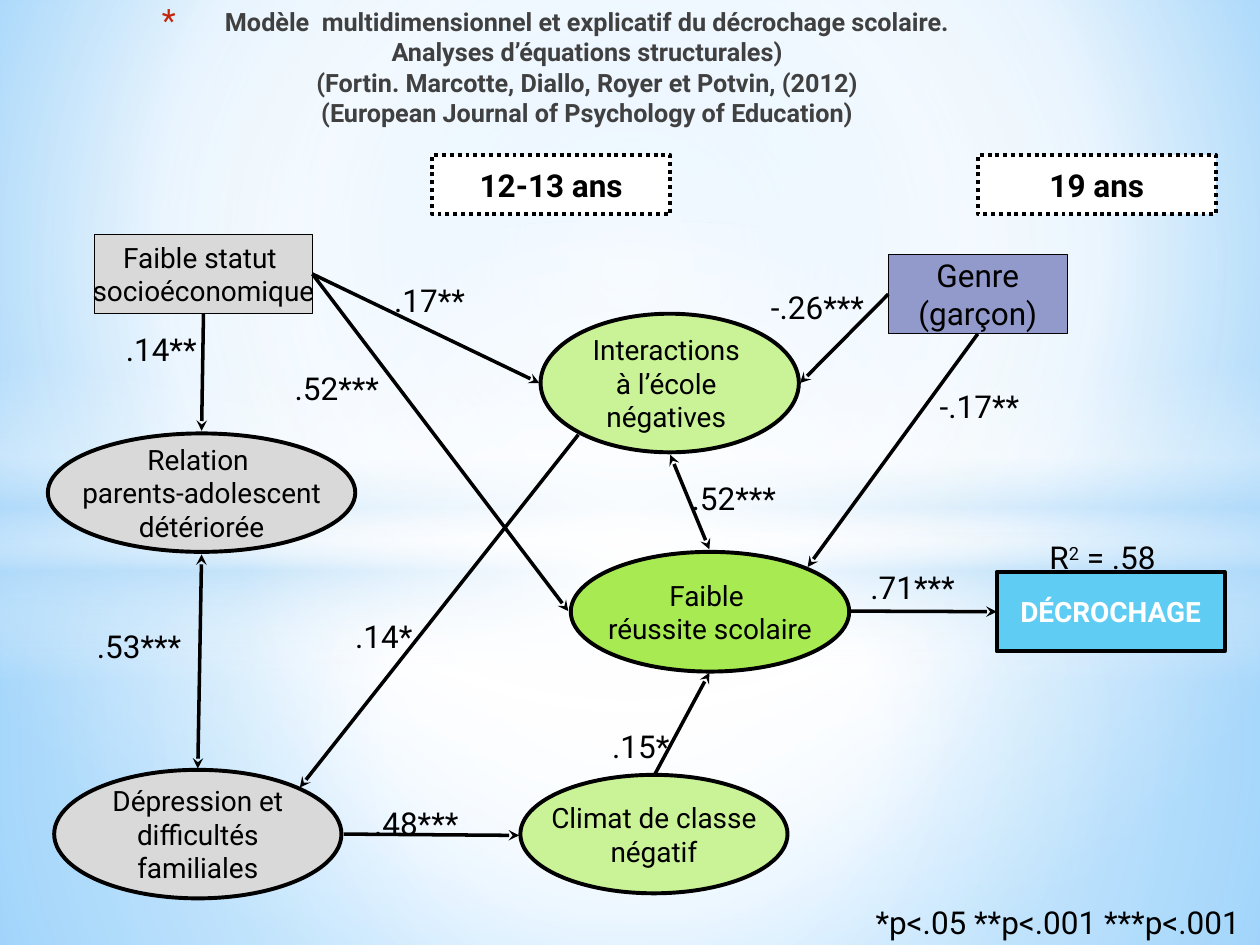
from lxml import etree
from pptx import Presentation
from pptx.dml.color import RGBColor
from pptx.enum.dml import MSO_LINE
from pptx.enum.shapes import MSO_CONNECTOR, MSO_SHAPE
from pptx.enum.text import MSO_ANCHOR, MSO_AUTO_SIZE, PP_ALIGN
from pptx.oxml.ns import qn
from pptx.util import Inches, Pt

RECTANGLE, OVAL = MSO_SHAPE.RECTANGLE, MSO_SHAPE.OVAL
STRAIGHT = MSO_CONNECTOR.STRAIGHT
DOTTED = MSO_LINE.ROUND_DOT
TOP, MIDDLE = MSO_ANCHOR.TOP, MSO_ANCHOR.MIDDLE
CENTER, LEFT = PP_ALIGN.CENTER, PP_ALIGN.LEFT
NO_AUTOFIT = MSO_AUTO_SIZE.NONE

FONT = "Roboto"
BLACK = RGBColor(0x00, 0x00, 0x00)
WHITE = RGBColor(0xFF, 0xFF, 0xFF)
CHARCOAL = RGBColor(0x40, 0x40, 0x40)
RED = RGBColor(0xC3, 0x26, 0x0C)
GRAY = RGBColor(0xD9, 0xD9, 0xD9)
LAVENDER = RGBColor(0x91, 0x9A, 0xCA)
CYAN = RGBColor(0x5E, 0xCC, 0xF3)
PALE_GREEN = RGBColor(0xCA, 0xF2, 0x97)
GREEN = RGBColor(0xA7, 0xEA, 0x52)
SKY = RGBColor(0x9E, 0xD5, 0xFF)
DEEP_SKY = RGBColor(0x5B, 0xB9, 0xFF)
MIST = RGBColor(0xB4, 0xDC, 0xFA)

TITLE = """Modèle  multidimensionnel et explicatif du décrochage scolaire.
Analyses d’équations structurales)
(Fortin. Marcotte, Diallo, Royer et Potvin, (2012)
(European Journal of Psychology of Education)"""

CENTERED = (50, 50, 50, 50)
BACKDROP = [
    (RECTANGLE, (0, 4.23, 10, 3.27), [(0, WHITE, 91), (37, WHITE, 76), (100, MIST, 79)], CENTERED),
    (RECTANGLE, (0, 0, 10, 4.23), [(0, WHITE, 89), (48, WHITE, 62), (100, MIST, 79)], CENTERED),
    (RECTANGLE, (0, 2.9, 10, 2.5),
     [(0, WHITE, 0), (29, WHITE, 30), (45, MIST, 40), (55, WHITE, 26), (65, MIST, 60), (100, WHITE, 0)], None),
    (OVAL, (0, 1.75, 10, 5.58), [(0, WHITE, 100), (54, WHITE, 0)], CENTERED),
]

FACTORS = [
    ("Relation \nparents-adolescent\ndétériorée", (0.38, 3.44, 2.44, 0.94), GRAY),
    ("Dépression et\ndifficultés\nfamiliales", (0.43, 6.11, 2.28, 1.02), GRAY),
    ("Climat de classe\nnégatif", (4.13, 6.15, 2.12, 0.94), PALE_GREEN),
    ("Faible \nréussite scolaire", (4.53, 4.38, 2.21, 0.95), GREEN),
    ("Interactions \nà l’école \nnégatives ", (4.29, 2.49, 2.05, 1.1), PALE_GREEN),
]

COEFFICIENTS = [
    (".14**", 0.9, 2.57, 0.79),
    (".53***", 0.67, 4.93, 0.95),
    (".48***", 2.87, 6.33, 0.95),
    (".17**", 3.03, 2.18, 0.95),
    (".52***", 2.24, 2.88, 0.95),
    (".14*", 2.72, 4.85, 0.95),
    (".15*", 4.76, 5.72, 0.95),
    ("-.26***", 6.02, 2.24, 1.02),
    ("-.17**", 7.36, 3.02, 0.95),
    (".52***", 5.39, 3.75, 0.95),
    (".71***", 6.81, 4.46, 0.95),
]


def apply_gradient(fill, properties, stops, focus):
    fill.solid()
    gradient = etree.Element(qn("a:gradFill"), rotWithShape="1")
    stop_list = etree.SubElement(gradient, qn("a:gsLst"))
    for position, color, opacity in stops:
        stop = etree.SubElement(stop_list, qn("a:gs"), pos=str(position * 1000))
        color_element = etree.SubElement(stop, qn("a:srgbClr"), val=str(color))
        etree.SubElement(color_element, qn("a:alpha"), val=str(opacity * 1000))
    if focus:
        shade = etree.SubElement(gradient, qn("a:path"), {"path": "circle"})
        edges = {side: str(value * 1000) for side, value in zip("ltrb", focus)}
        etree.SubElement(shade, qn("a:fillToRect"), edges)
    else:
        etree.SubElement(gradient, qn("a:lin"), ang="5400000", scaled="0")
    properties.replace(properties.find(qn("a:solidFill")), gradient)


def format_text(text_frame, size, color=BLACK, bold=False, align=CENTER):
    for paragraph in text_frame.paragraphs:
        paragraph.alignment = align
        for run in paragraph.runs:
            run.font.name = FONT
            run.font.size = Pt(size)
            run.font.bold = bold
            run.font.color.rgb = color


def add_backdrop(slide):
    background = slide.background
    fill = background.fill
    fill.solid()
    properties = background._cSld.find(qn("p:bg")).find(qn("p:bgPr"))
    apply_gradient(fill, properties, [(0, SKY, 100), (60, WHITE, 100), (100, DEEP_SKY, 100)], (20, 10, 20, 60))
    for kind, box, stops, focus in BACKDROP:
        shape = slide.shapes.add_shape(kind, *map(Inches, box))
        shape.shadow.inherit = False
        shape.line.fill.background()
        apply_gradient(shape.fill, shape._element.spPr, stops, focus)


def add_title(slide):
    title = slide.shapes.title
    title._element.getparent().append(title._element)
    title.left, title.top, title.width, title.height = map(Inches, (0, 0, 8.62, 1.15))
    text_frame = title.text_frame
    text_frame.auto_size = NO_AUTOFIT
    text_frame.vertical_anchor = TOP
    paragraph = text_frame.paragraphs[0]
    paragraph.text = "\v".join(TITLE.splitlines())
    format_text(text_frame, 14.4, CHARCOAL, True)
    paragraph.line_spacing = 1.0
    paragraph.space_before = Pt(0)
    properties = paragraph._p.get_or_add_pPr()
    properties.set("marL", str(Inches(0.7)))
    properties.set("indent", str(Inches(-0.5)))
    bullet_color = etree.SubElement(properties, qn("a:buClr"))
    etree.SubElement(bullet_color, qn("a:srgbClr"), val=str(RED))
    etree.SubElement(properties, qn("a:buSzPct"), val="128000")
    etree.SubElement(properties, qn("a:buFont"), typeface=FONT)
    etree.SubElement(properties, qn("a:buChar"), char="*")


def add_node(slide, kind, text, box, color, size=16, line_width=2.25, font_color=BLACK, bold=False):
    shape = slide.shapes.add_shape(kind, *map(Inches, box))
    shape.shadow.inherit = False
    shape.fill.solid()
    shape.fill.fore_color.rgb = color
    shape.line.color.rgb = BLACK
    shape.line.width = Pt(line_width)
    text_frame = shape.text_frame
    text_frame.text = text
    text_frame.word_wrap = False
    text_frame.vertical_anchor = MIDDLE
    format_text(text_frame, size, font_color, bold)
    return shape


def add_arrow(slide, start, end, both_ends=False):
    connector = slide.shapes.add_connector(STRAIGHT, *map(Inches, start + end))
    connector.line.color.rgb = BLACK
    connector.line.width = Pt(2)
    line = connector.line._get_or_add_ln()
    for tag in ("a:headEnd", "a:tailEnd") if both_ends else ("a:tailEnd",):
        etree.SubElement(line, qn(tag), type="stealth")
    etree.SubElement(connector._element.spPr, qn("a:effectLst"))
    return connector


def add_label(slide, text, box, wrap=True, anchor=TOP):
    label = slide.shapes.add_textbox(*map(Inches, box))
    text_frame = label.text_frame
    text_frame.text = text
    text_frame.word_wrap = wrap
    text_frame.vertical_anchor = anchor
    format_text(text_frame, 18, align=LEFT)
    return text_frame


def add_r_squared(slide):
    text_frame = add_label(slide, "R", (8.23, 4.22, 1.12, 0.38))
    paragraph = text_frame.paragraphs[0]
    exponent = paragraph.add_run()
    exponent.text = "2"
    paragraph.add_run().text = " = .58"
    format_text(text_frame, 18, align=LEFT)
    exponent._r.get_or_add_rPr().set("baseline", "30000")


def add_arrows(slide, status, gender, dropout):
    add_arrow(slide, (1.61, 2.49), (1.6, 3.42)).begin_connect(status, 2)
    add_arrow(slide, (1.6, 4.4), (1.57, 6.1), True)
    add_arrow(slide, (2.73, 6.62), (4.12, 6.63))
    add_arrow(slide, (5.2, 6.14), (5.63, 5.34))
    for end in ((4.51, 4.85), (4.28, 3.04)):
        add_arrow(slide, (2.48, 2.18), end).begin_connect(status, 3)
    add_arrow(slide, (4.59, 3.45), (2.38, 6.25))
    add_arrow(slide, (5.32, 3.61), (5.63, 4.36), True)
    add_arrow(slide, (7.05, 2.33), (6.35, 3.04)).begin_connect(gender, 1)
    add_arrow(slide, (7.76, 2.65), (6.41, 4.5)).begin_connect(gender, 2)
    add_arrow(slide, (6.75, 4.85), (7.9, 4.85)).end_connect(dropout, 1)


def main():
    presentation = Presentation()
    presentation.slide_width, presentation.slide_height = Inches(10), Inches(7.5)
    slide = presentation.slides.add_slide(presentation.slide_layouts[5])
    add_backdrop(slide)
    add_title(slide)
    status = add_node(slide, RECTANGLE, "Faible statut \nsocioéconomique", (0.75, 1.86, 1.73, 0.63), GRAY, 16, 0.75)
    gender = add_node(slide, RECTANGLE, "Genre\n(garçon)", (7.05, 2.02, 1.42, 0.63), LAVENDER, 18, 0.75)
    dropout = add_node(slide, RECTANGLE, "DÉCROCHAGE", (7.91, 4.54, 1.81, 0.63), CYAN, font_color=WHITE, bold=True)
    for text, box, color in FACTORS:
        add_node(slide, OVAL, text, box, color)
    add_arrows(slide, status, gender, dropout)
    for text, left in (("12-13 ans", 3.43), ("19 ans", 7.76)):
        age = add_node(slide, RECTANGLE, text, (left, 1.23, 1.89, 0.47), WHITE, 18, bold=True)
        age.line.dash_style = DOTTED
    add_label(slide, "*p<.05 **p<.001 ***p<.001", (6.85, 7.14, 3.15, 0.36), False, MIDDLE)
    for text, left, top, width in COEFFICIENTS:
        add_label(slide, text, (left, top, width, 0.33))
    add_r_squared(slide)
    presentation.save("out.pptx")


if __name__ == "__main__":
    main()
